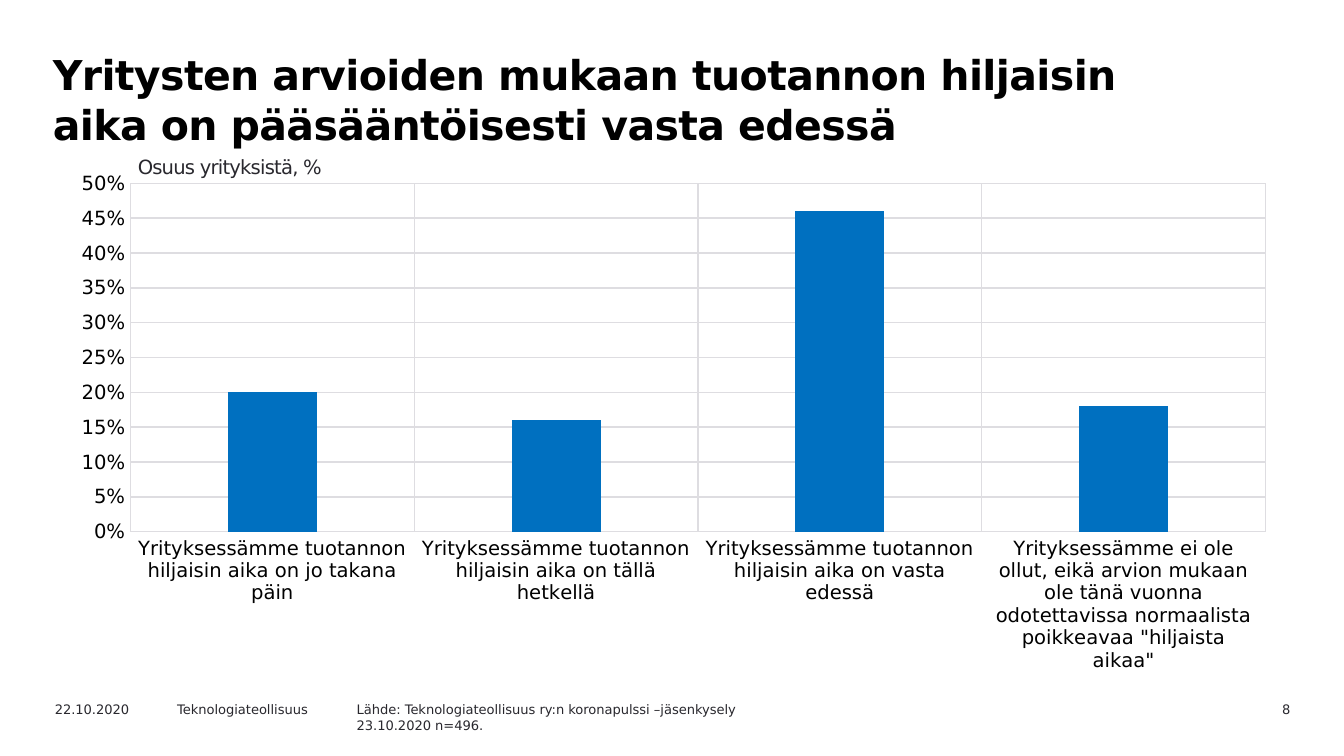
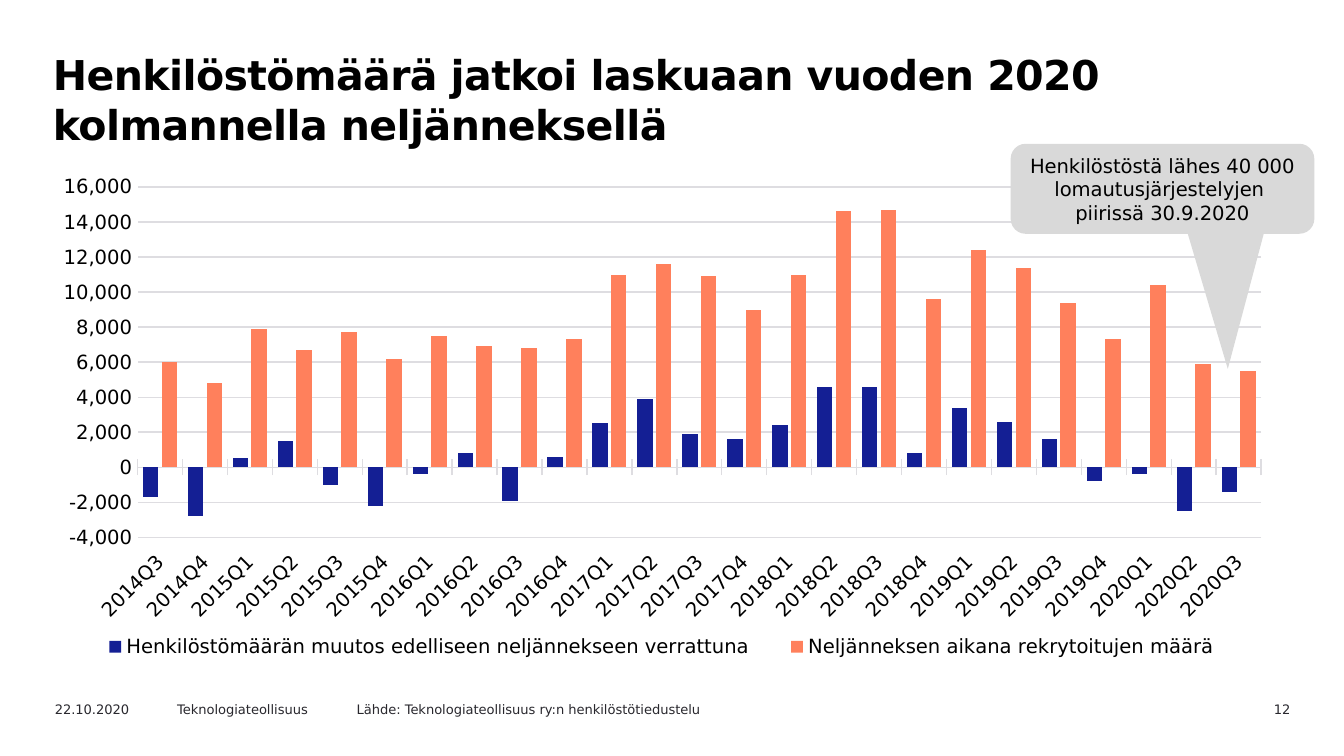
from dataclasses import dataclass

from lxml import etree
from pptx import Presentation
from pptx.chart.data import CategoryChartData
from pptx.dml.color import RGBColor
from pptx.enum.chart import XL_CHART_TYPE as ChartType
from pptx.enum.chart import XL_LEGEND_POSITION as LegendPosition
from pptx.enum.chart import XL_TICK_LABEL_POSITION as LabelPosition
from pptx.enum.chart import XL_TICK_MARK as TickMark
from pptx.enum.shapes import MSO_SHAPE as ShapeType
from pptx.enum.text import MSO_ANCHOR as Anchor
from pptx.enum.text import MSO_AUTO_SIZE as AutoSize
from pptx.enum.text import PP_ALIGN as Align
from pptx.oxml.ns import qn
from pptx.util import Emu, Pt


@dataclass(frozen=True)
class Theme:
    font: str = "DejaVu Sans"
    black: str = "000000"
    text: str = "29282E"
    grid: str = "DEDDE1"
    callout: str = "D9D9D9"
    blue: str = "0070C0"
    navy: str = "141F94"
    coral: str = "FF805C"
    title_size: float = 22
    title_leading: float = 27
    label_size: float = 10.5
    chart_size: float = 10
    footer_size: float = 7


THEME = Theme()
EMU_PER_PX = 4572  # 200 px to the inch
SLIDE_SIZE = (2000, 1125)


def px(length):
    return Emu(length * EMU_PER_PX)


def place(box):
    return [px(length) for length in box]


def rgb(code):
    return RGBColor.from_string(code)


def style_font(font, size, color, bold=False):
    font.name = THEME.font
    font.size = Pt(size)
    font.bold = bold
    font.color.rgb = rgb(color)


def fill_text(frame, lines, size, color, bold=False, align=Align.LEFT):
    frame.word_wrap = True
    for index, line in enumerate(lines):
        paragraph = frame.paragraphs[0] if index == 0 else frame.add_paragraph()
        paragraph.text = line
        paragraph.alignment = align
        style_font(paragraph.font, size, color, bold)


def add_text(slide, box, lines, size, color, **style):
    frame = slide.shapes.add_textbox(*place(box)).text_frame
    fill_text(frame, lines, size, color, **style)
    return frame


def set_tracking(paragraph, hundredths):
    for run in paragraph.runs:
        run._r.get_or_add_rPr().set("spc", str(hundredths))


# Title and footer shared by the slides
def add_title(slide, box, title):
    frame = add_text(slide, box, [title], THEME.title_size, THEME.black, bold=True)
    paragraph = frame.paragraphs[0]
    paragraph.line_spacing = Pt(THEME.title_leading)
    paragraph._p.get_or_add_pPr().set("marL", str(px(4)))
    set_tracking(paragraph, -30)


def add_footer(slide, box, source, number):
    left, top, width, height = box
    cells = [
        (0, 200, ["22.10.2020"], Align.LEFT),
        (182, 284, ["Teknologiateollisuus"], Align.LEFT),
        (449, 650, source, Align.LEFT),
        (width - 188, 188, [number], Align.RIGHT),
    ]
    for offset, cell_width, lines, align in cells:
        add_text(slide, (left + offset, top, cell_width, height), lines,
                 THEME.footer_size, THEME.text, align=align)


def start_slide(presentation, title, title_width, source, number):
    slide = presentation.slides.add_slide(presentation.slide_layouts[6])
    add_title(slide, (55, 62, title_width, 142), title)
    add_footer(slide, (62, 1034, 1878, 36), source, number)
    return slide


# Column charts
def style_line(line):
    line.color.rgb = rgb(THEME.grid)
    line.width = Pt(0.75)


def set_layout(parent, position, fractions, target=()):
    """Fix a chart part at fractions (x, y, w, h) of the chart."""
    for layout in parent.findall(qn("c:layout")):
        parent.remove(layout)
    layout = etree.Element(qn("c:layout"))
    manual = etree.SubElement(layout, qn("c:manualLayout"))
    settings = [*target, ("xMode", "edge"), ("yMode", "edge")]
    for tag, value in settings + list(zip("xywh", fractions)):
        etree.SubElement(manual, qn(f"c:{tag}")).set("val", str(value))
    parent.insert(position, layout)


def style_value_axis(axis, scale, number_format):
    axis.minimum_scale, axis.maximum_scale, axis.major_unit = scale
    axis.major_tick_mark = axis.minor_tick_mark = TickMark.NONE
    axis.tick_labels.number_format = number_format
    axis.tick_labels.number_format_is_linked = False
    style_font(axis.tick_labels.font, THEME.label_size, THEME.black)
    axis.format.line.fill.background()
    style_line(axis.major_gridlines.format.line)


def style_category_axis(axis, tick_mark):
    axis.major_tick_mark = tick_mark
    axis.minor_tick_mark = TickMark.NONE
    style_font(axis.tick_labels.font, THEME.label_size, THEME.black)
    style_line(axis.format.line)


def add_columns(slide, box, categories, series, scale, number_format,
                gap, overlap, layout, tick_mark=TickMark.NONE):
    data = CategoryChartData(number_format=number_format)
    data.categories = categories
    for name, values, _ in series:
        data.add_series(name, values)
    chart = slide.shapes.add_chart(
        ChartType.COLUMN_CLUSTERED, *place(box), data).chart
    chart.has_title = False
    chart.has_legend = False
    style_font(chart.font, THEME.chart_size, THEME.text)

    plot = chart.plots[0]
    plot.vary_by_categories = False
    plot.gap_width = gap
    plot.overlap = overlap
    for columns, (_, _, color) in zip(plot.series, series):
        columns.invert_if_negative = False
        columns.format.fill.solid()
        columns.format.fill.fore_color.rgb = rgb(color)

    style_value_axis(chart.value_axis, scale, number_format)
    style_category_axis(chart.category_axis, tick_mark)
    set_layout(chart._chartSpace.chart.plotArea, 0, layout,
               [("layoutTarget", "inner")])
    return chart


def add_bottom_legend(chart, layout):
    chart.has_legend = True
    legend = chart.legend
    legend.position = LegendPosition.BOTTOM
    legend.include_in_layout = False
    style_font(legend.font, THEME.label_size, THEME.black)
    set_layout(legend._element, 1, layout)


# Slide: when production is at its quietest
def add_quiet_period_slide(presentation):
    slide = start_slide(
        presentation,
        "Yritysten arvioiden mukaan tuotannon hiljaisin aika on "
        "pääsääntöisesti vasta edessä",
        1748,
        ["Lähde: Teknologiateollisuus ry:n koronapulssi –jäsenkysely",
         "23.10.2020 n=496."],
        "8")
    quiet_time = "Yrityksessämme tuotannon hiljaisin aika on "
    categories = [quiet_time + when
                  for when in ("jo takana päin", "tällä hetkellä", "vasta edessä")]
    categories.append(
        "Yrityksessämme ei ole ollut, eikä arvion mukaan ole tänä vuonna "
        "odotettavissa normaalista poikkeavaa \"hiljaista aikaa\"")
    chart = add_columns(
        slide, (84, 242, 1836, 774), categories,
        [("Series 1", (0.2, 0.16, 0.46, 0.18), THEME.blue)],
        scale=(0, 0.5, 0.05), number_format="0%", gap=219, overlap=0,
        layout=(0.06, 0.04, 0.92, 0.67))
    style_line(chart.category_axis.major_gridlines.format.line)

    # Unit above the value axis
    frame = add_text(slide, (197, 223, 678, 52), ["Osuus yrityksistä, %"],
                     THEME.label_size, THEME.text)
    frame.auto_size = AutoSize.SHAPE_TO_FIT_TEXT
    frame.margin_left = frame.margin_right = px(8)
    frame.margin_top = frame.margin_bottom = px(8)
    set_tracking(frame.paragraphs[0], -40)


# Slide: change in personnel and recruitment by quarter
def add_layoff_callout(slide, box):
    callout = slide.shapes.add_shape(
        ShapeType.ROUNDED_RECTANGULAR_CALLOUT, *place(box))
    for index, value in enumerate((0.215, 2.0, 0.167)):
        callout.adjustments[index] = value
    callout.shadow.inherit = False
    callout.fill.solid()
    callout.fill.fore_color.rgb = rgb(THEME.callout)
    callout.line.fill.background()
    callout.text_frame.vertical_anchor = Anchor.MIDDLE
    fill_text(callout.text_frame,
              ["Henkilöstöstä lähes 40 000", "lomautusjärjestelyjen ",
               "piirissä 30.9.2020"],
              THEME.label_size, THEME.black, align=Align.CENTER)


def add_personnel_slide(presentation):
    slide = start_slide(
        presentation,
        "Henkilöstömäärä jatkoi laskuaan vuoden 2020 kolmannella neljänneksellä",
        1716,
        ["Lähde: Teknologiateollisuus ry:n henkilöstötiedustelu"],
        "12")
    # 25 quarters from 2014Q3 to 2020Q3
    quarters = [f"{2014 + n // 4}Q{n % 4 + 1}" for n in range(2, 27)]
    change = (-1700, -2800, 500, 1500, -1000, -2200, -400, 800, -1900, 600,
              2500, 3900, 1900, 1600, 2400, 4600, 4600, 800, 3400, 2600,
              1600, -800, -400, -2500, -1400)
    recruited = (6000, 4800, 7900, 6700, 7700, 6200, 7500, 6900, 6800, 7300,
                 11000, 11600, 10900, 9000, 11000, 14600, 14700, 9600, 12400,
                 11400, 9400, 7300, 10400, 5900, 5500)
    chart = add_columns(
        slide, (56, 248, 1858, 756), quarters,
        [("Henkilöstömäärän muutos edelliseen neljännekseen verrattuna",
          change, THEME.navy),
         ("Neljänneksen aikana rekrytoitujen määrä", recruited, THEME.coral)],
        scale=(-4000, 16000, 2000), number_format="#,##0", gap=70, overlap=-21,
        layout=(0.08, 0.04, 0.9, 0.69), tick_mark=TickMark.CROSS)

    # Slanted quarter labels below the negative columns
    axis = chart.category_axis
    axis.tick_label_position = LabelPosition.LOW
    axis._element.find(qn("c:txPr")).find(qn("a:bodyPr")).set("rot", "-2700000")

    add_bottom_legend(chart, (0.03, 0.91, 0.94, 0.07))
    add_layoff_callout(slide, (1504, 214, 452, 134))


def main():
    presentation = Presentation()
    presentation.slide_width, presentation.slide_height = place(SLIDE_SIZE)
    add_quiet_period_slide(presentation)
    add_personnel_slide(presentation)
    presentation.save("out.pptx")


if __name__ == "__main__":
    main()
